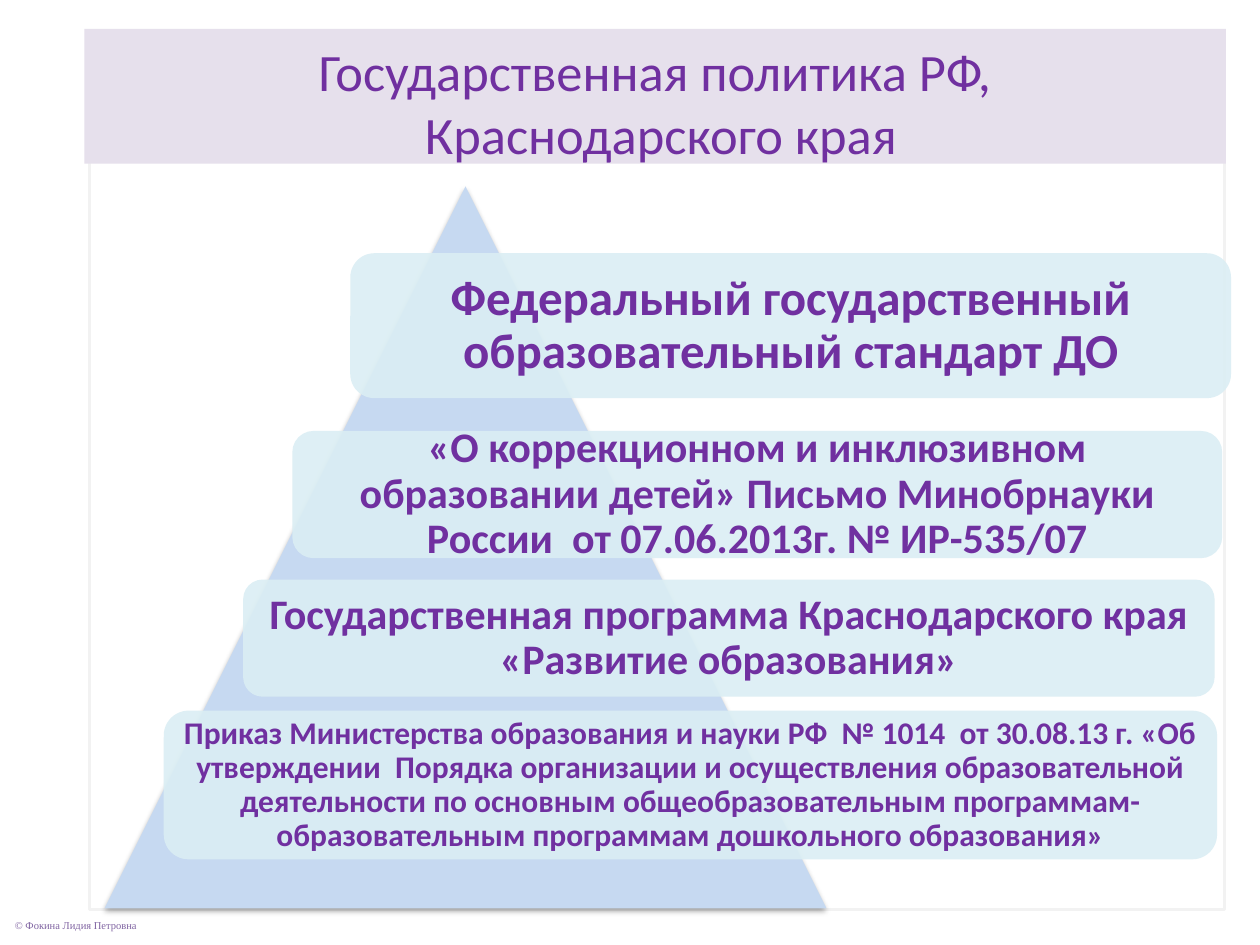
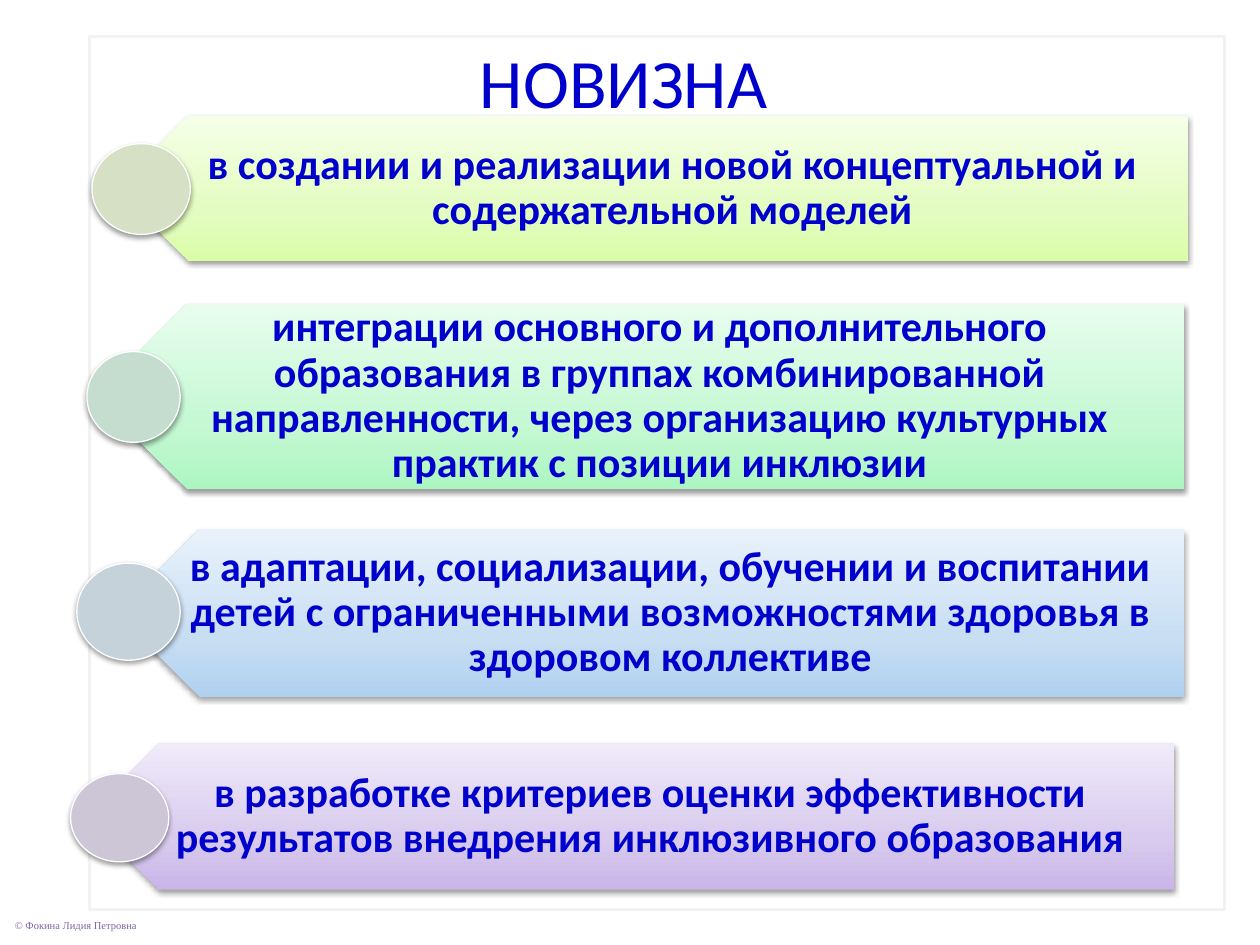
import dataclasses

import lxml.etree
import pptx
import pptx.dml.color
import pptx.enum.shapes
import pptx.enum.text
import pptx.oxml.ns
import pptx.util

Inches = pptx.util.Inches
Pt = pptx.util.Pt
RGB = pptx.dml.color.RGBColor.from_string
SHAPE = pptx.enum.shapes.MSO_SHAPE
ANCHOR = pptx.enum.text.MSO_ANCHOR
ALIGN = pptx.enum.text.PP_ALIGN
qn = pptx.oxml.ns.qn


@dataclasses.dataclass(frozen=True)
class Theme:
    font: str = "Calibri"
    footer_font: str = "Times New Roman"
    white: str = "FFFFFF"
    frame_line: str = "F2F2F2"
    footer: str = "8064A2"
    purple: str = "7030A0"
    blue: str = "0000CC"
    title_band: str = "E6E0EC"
    pyramid: str = "C6D9F1"
    level: str = "DBEEF4"
    shadow: str = "000000"
    footer_size: float = 6
    policy_title_size: float = 30
    novelty_title_size: float = 39.6
    first_level_size: float = 28
    body_size: float = 24
    small_size: float = 18


theme = Theme()


def add_box(s, kind, at, fill=None, opacity=100, line=None, line_width=1, shadow=None):
    sp = s.shapes.add_shape(kind, *[Inches(v) for v in at])
    sp.shadow.inherit = False
    spPr = sp._element.spPr
    if fill:
        sp.fill.solid()
        sp.fill.fore_color.rgb = RGB(fill)
        if opacity < 100:
            color = spPr.find(qn("a:solidFill")).find(qn("a:srgbClr"))
            lxml.etree.SubElement(color, qn("a:alpha"), val=str(opacity * 1000))
    else:
        sp.fill.background()
    if line:
        sp.line.color.rgb = RGB(line)
        sp.line.width = Pt(line_width)
    else:
        sp.line.fill.background()
    if shadow:
        opacity, distance = shadow
        outer = lxml.etree.SubElement(
            spPr.find(qn("a:effectLst")), qn("a:outerShdw"), blurRad=str(Pt(3.1)),
            dist=str(Pt(distance)), dir="5400000", rotWithShape="0")
        color = lxml.etree.SubElement(outer, qn("a:srgbClr"), val=theme.shadow)
        lxml.etree.SubElement(color, qn("a:alpha"), val=str(opacity * 1000))
    return sp


def write(sp, text, size, color, insets, font=theme.font, bold=False,
          anchor=ANCHOR.MIDDLE, align=ALIGN.CENTER, spacing=None, wrap=True):
    tf = sp.text_frame
    tf.text = text
    tf.word_wrap = wrap
    tf.vertical_anchor = anchor
    tf.margin_left, tf.margin_top, tf.margin_right, tf.margin_bottom = map(Inches, insets)
    p = tf.paragraphs[0]
    p.alignment = align
    p.line_spacing = spacing
    for r in p.runs:
        r.font.name = font
        r.font.size = Pt(size)
        r.font.bold = bold
        r.font.color.rgb = RGB(color)


prs = pptx.Presentation()
prs.slide_width = Inches(10)
prs.slide_height = Inches(7.5)

titles = [
    ("Государственная политика РФ,\v Краснодарского края",
     (0.67, 0.23, 9.06, 1.07), theme.title_band, theme.policy_title_size, theme.purple),
    ("НОВИЗНА",
     (0.7, 0.23, 8.5, 0.63), None, theme.novelty_title_size, theme.blue),
]
slides = []
for title, at, band, size, color in titles:
    s = prs.slides.add_slide(prs.slide_layouts[6])
    add_box(s, SHAPE.RECTANGLE, (0.71, 0.29, 9.01, 6.93), theme.white, 70,
            theme.frame_line, 2)
    footer = s.shapes.add_textbox(Inches(0.02), Inches(7.24), Inches(1.2), Inches(0.2))
    write(footer, "© Фокина Лидия Петровна", theme.footer_size, theme.footer,
          (0.1, 0.05, 0.1, 0.05), font=theme.footer_font, align=ALIGN.LEFT, wrap=False)
    heading = add_box(s, SHAPE.RECTANGLE, at, band)
    write(heading, title, size, color, (0.1, 0.08, 0.1, 0.05), anchor=ANCHOR.TOP)
    slides.append(s)

policy, novelty = slides

add_box(policy, SHAPE.ISOSCELES_TRIANGLE, (0.83, 1.48, 5.73, 5.73), theme.pyramid,
        shadow=(35, 1.8))
levels = [
    ((2.78, 2.01, 6.99, 1.15), theme.first_level_size, 0.07,
     "Федеральный государственный образовательный стандарт ДО"),
    ((2.32, 3.42, 7.38, 1.01), theme.body_size, 0.05,
     "«О коррекционном и инклюзивном образовании детей» Письмо Минобрнауки "
     "России  от 07.06.2013г. № ИР-535/07"),
    ((1.93, 4.6, 7.71, 0.93), theme.body_size, 0.05,
     "Государственная программа Краснодарского края «Развитие образования»"),
    ((1.3, 5.64, 8.36, 1.18), theme.small_size, 0.02,
     "Приказ Министерства образования и науки РФ  № 1014  от 30.08.13 г. «Об "
     "утверждении  Порядка организации и осуществления образовательной "
     "деятельности по основным общеобразовательным программам- "
     "образовательным программам дошкольного образования»"),
]
for at, size, inset, text in levels:
    level = add_box(policy, SHAPE.ROUNDED_RECTANGLE, at, theme.level, 90)
    write(level, text, size, theme.purple, [inset] * 4, bold=True, spacing=0.9)

novelties = [
    ((0.92, 0.92, 8.51, 1.15), ("DAFDA7", "E4FCC2", "F5FFE7"),
     (0.73, 1.14, 0.78, 0.72), "D5E0C4",
     "в создании и реализации новой концептуальной и содержательной моделей"),
    ((0.75, 2.41, 8.65, 1.47), ("ACF6C1", "C5F8D3", "E8FDEE"),
     (0.69, 2.79, 0.74, 0.72), "C4DDCE",
     "интеграции основного и дополнительного образования в группах "
     "комбинированной направленности, через организацию культурных практик "
     "с позиции инклюзии"),
    ((0.92, 4.2, 8.48, 1.33), ("B0D1EF", "C8DEF3", "E9F2FB"),
     (0.61, 4.47, 0.82, 0.77), "C5D2DA",
     "в адаптации, социализации, обучении и воспитании детей с ограниченными "
     "возможностями здоровья в здоровом коллективе"),
    ((0.68, 5.9, 8.64, 1.16), ("C9B5E8", "D8CBEE", "F0EAF9"),
     (0.56, 6.14, 0.78, 0.7), "CDC6D7",
     "в разработке критериев оценки эффективности результатов внедрения "
     "инклюзивного образования"),
]
for arrow_at, gradient, dot_at, dot_color, text in novelties:
    arrow = add_box(novelty, SHAPE.PENTAGON, arrow_at, shadow=(38, 1.6))
    arrow.rotation = 180
    arrow.fill.gradient()
    arrow.fill.gradient_angle = 90
    grad = arrow._element.spPr.find(qn("a:gradFill"))
    grad.set("rotWithShape", "0")
    stops = grad.find(qn("a:gsLst"))
    for stop in list(stops):
        stops.remove(stop)
    for position, color in zip((0, 35, 100), gradient):
        stop = lxml.etree.SubElement(stops, qn("a:gs"), pos=str(position * 1000))
        lxml.etree.SubElement(stop, qn("a:srgbClr"), val=color)

    label = novelty.shapes.add_textbox(*[Inches(v) for v in arrow_at])
    write(label, text, theme.body_size, theme.blue, (0.51, 0.1, 0.19, 0.1),
          bold=True, spacing=0.9)
    add_box(novelty, SHAPE.OVAL, dot_at, dot_color, line=theme.white,
            line_width=0.75, shadow=(38, 1.6))

prs.save("out.pptx")
